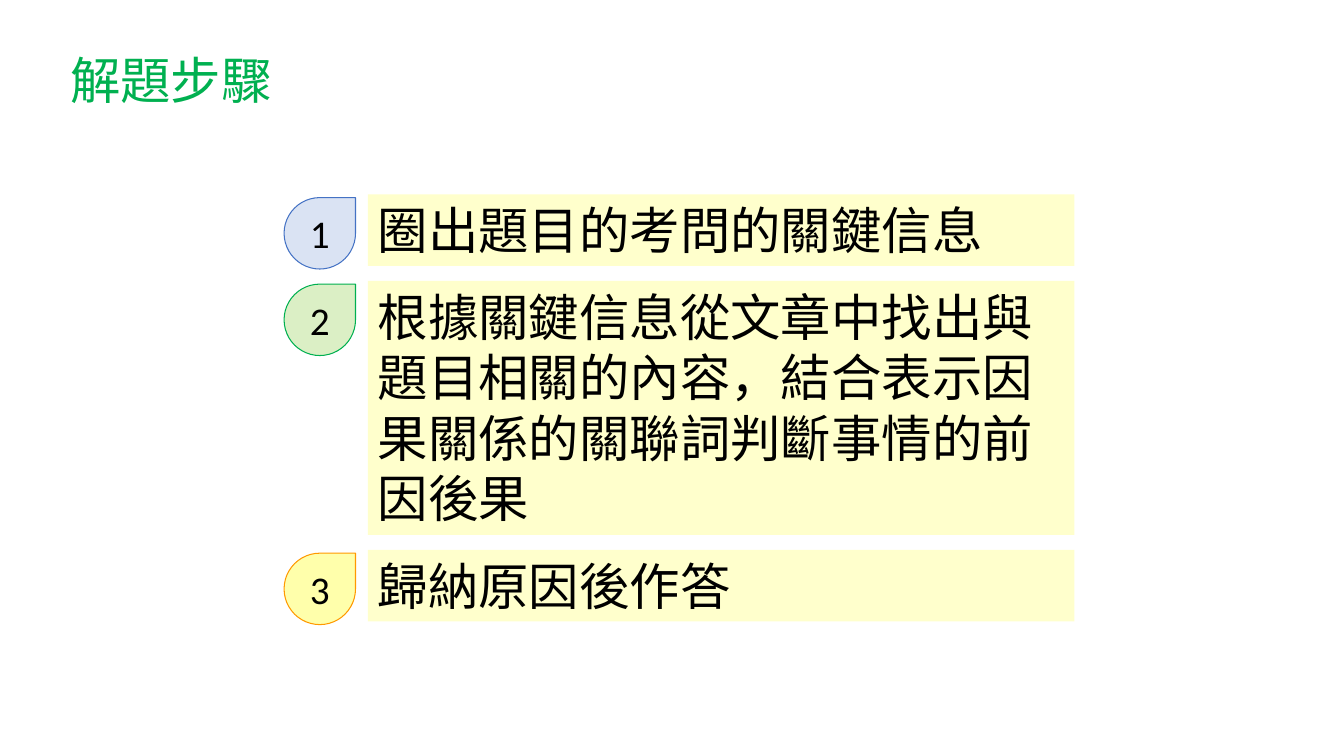
from dataclasses import dataclass

from lxml.etree import SubElement
from pptx import Presentation
from pptx.dml.color import RGBColor
from pptx.enum.shapes import MSO_SHAPE as Preset
from pptx.enum.text import MSO_ANCHOR as Anchor, MSO_AUTO_SIZE as AutoSize, PP_ALIGN as Align
from pptx.oxml.ns import qn
from pptx.shapes.autoshape import Shape
from pptx.slide import Slide
from pptx.util import Cm, Pt


@dataclass(frozen=True)
class Theme:
    ink: str = "000000"
    heading: str = "00B050"
    panel: str = "FFFFCC"
    heading_font: str = "Noto Sans CJK SC"
    body_font: str = "Lato"
    number_font: str = "Calibri"
    body_size: int = 36
    number_size: int = 28
    badge_line: float = 0.75
    badge_opacity: int = 33


@dataclass(frozen=True)
class Step:
    text: str
    height: float
    fill: str
    line: str


THEME = Theme()
STEPS = [
    Step("圈出題目的考問的關鍵信息", 1.8, "8FAADC", "4472C4"),
    Step(
        "根據關鍵信息從文章中找出與題目相關的內容，結合表示因果關係的關聯詞判斷事情的前因後果",
        6.4, "92D050", "00B050",
    ),
    Step("歸納原因後作答", 1.8, "FFFF00", "FF9900"),
]
STEPS_TOP, STEP_GAP = 4.9, 0.38
PANEL_LEFT, PANEL_WIDTH = 9.27, 17.81
BADGE_LEFT, BADGE_SIZE, BADGE_DROP = 7.16, 1.8, 0.08


def write(shape: Shape, text: str, font_name: str, size: int, color: str, align: Align = Align.LEFT) -> None:
    """Put one formatted paragraph into a shape."""
    paragraph = shape.text_frame.paragraphs[0]
    paragraph.text = text
    paragraph.alignment = align
    run = paragraph.runs[0]
    run.font.size = Pt(size)
    run.font.color.rgb = RGBColor.from_string(color)
    run.font.name = font_name
    SubElement(run.font._element, qn("a:ea")).set("typeface", font_name)


def add_filled(slide: Slide, preset: Preset, left: float, top: float, width: float, height: float, fill: str) -> Shape:
    """Add a flat preset shape with a solid fill and no line."""
    shape = slide.shapes.add_shape(preset, Cm(left), Cm(top), Cm(width), Cm(height))
    shape.shadow.inherit = False
    shape.fill.solid()
    shape.fill.fore_color.rgb = RGBColor.from_string(fill)
    shape.line.fill.background()
    return shape


def add_panel(slide: Slide, step: Step, top: float) -> None:
    """Add the text panel of a step."""
    panel = add_filled(slide, Preset.RECTANGLE, PANEL_LEFT, top, PANEL_WIDTH, step.height, THEME.panel)
    panel.text_frame.word_wrap = True
    panel.text_frame.auto_size = AutoSize.SHAPE_TO_FIT_TEXT
    panel.text_frame.vertical_anchor = Anchor.TOP
    write(panel, step.text, THEME.body_font, THEME.body_size, THEME.ink)


def add_badge(slide: Slide, step: Step, number: int, top: float) -> None:
    """Add the translucent numbered teardrop of a step."""
    badge = add_filled(slide, Preset.TEAR, BADGE_LEFT, top, BADGE_SIZE, BADGE_SIZE, step.fill)
    fill_color = badge._element.spPr.find(f"{qn('a:solidFill')}/{qn('a:srgbClr')}")
    SubElement(fill_color, qn("a:alpha")).set("val", str(THEME.badge_opacity * 1000))
    badge.line.color.rgb = RGBColor.from_string(step.line)
    badge.line.width = Pt(THEME.badge_line)
    badge.text_frame.vertical_anchor = Anchor.MIDDLE
    write(badge, str(number), THEME.number_font, THEME.number_size, THEME.ink, Align.CENTER)


def add_heading(slide: Slide, text: str) -> None:
    """Add the slide heading."""
    heading = slide.shapes.add_textbox(Cm(1.52), Cm(1.12), Cm(5.64), Cm(1.8))
    heading.text_frame.word_wrap = False
    heading.text_frame.auto_size = AutoSize.SHAPE_TO_FIT_TEXT
    write(heading, text, THEME.heading_font, THEME.body_size, THEME.heading)


def main() -> None:
    """Build and save the presentation."""
    presentation = Presentation()
    presentation.slide_width, presentation.slide_height = Cm(33.87), Cm(19.05)
    slide = presentation.slides.add_slide(presentation.slide_layouts[6])
    top = STEPS_TOP
    for number, step in enumerate(STEPS, start=1):
        add_panel(slide, step, top)
        add_badge(slide, step, number, top + BADGE_DROP)
        top += step.height + STEP_GAP
    add_heading(slide, "解題步驟")
    presentation.save("out.pptx")


if __name__ == "__main__":
    main()
